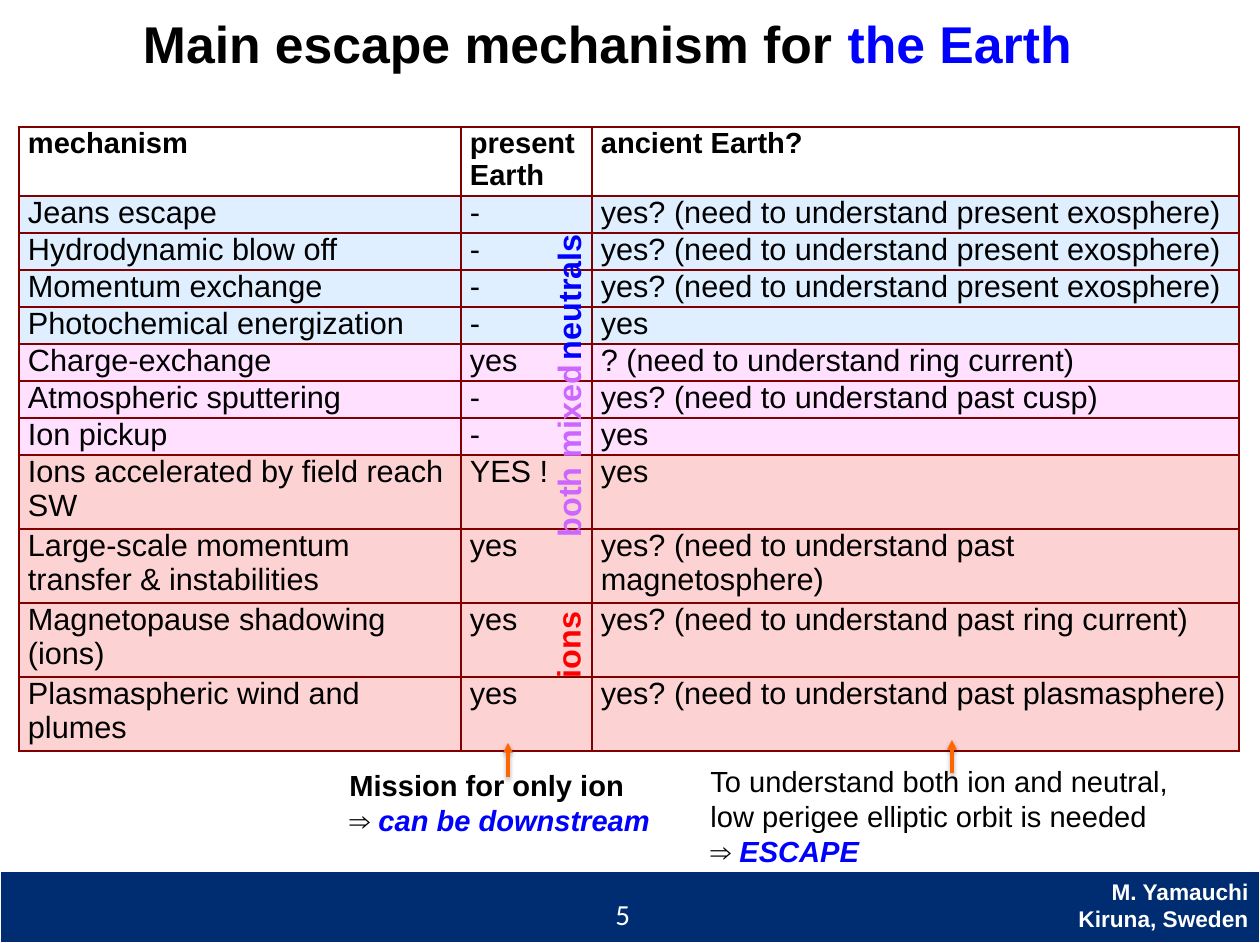
"""Build the slide on escape mechanisms for the Earth."""
from lxml.etree import SubElement as Sub
from pptx import Presentation
from pptx.dml.color import RGBColor as RGB
from pptx.enum.shapes import MSO_CONNECTOR as Conn, MSO_SHAPE as Shape
from pptx.enum.text import PP_ALIGN as Align
from pptx.oxml import parse_xml
from pptx.oxml.ns import nsdecls, qn
from pptx.util import Pt

BLACK, WHITE = RGB(0, 0, 0), RGB(255, 255, 255)
BLUE, RED, PURPLE = RGB(0, 0, 255), RGB(255, 0, 0), RGB(0xCC, 0x66, 0xFF)
NAVY, ORANGE = RGB(0, 0x2D, 0x72), RGB(0xFF, 0x66, 0)
SKY, PINK, ROSE = RGB(0xE0, 0xEF, 0xFF), RGB(0xFF, 0xE0, 0xFF), RGB(0xFD, 0xD2, 0xD3)
MAROON = "800000"

PX = 7862
WIDE, HIGH = 1260, 943
LEFT, TOP = 19, 127
COLS = (442, 131, 647)
HEAD, ROW, TALL = 69, 37, 74

EXO = "yes? (need to understand present exosphere)"
TITLES = ("mechanism", "present Earth", "ancient Earth?")
GROUPS = [
    (SKY, ROW, [
        ("Jeans escape", "-", EXO),
        ("Hydrodynamic blow off", "-", EXO),
        ("Momentum exchange", "-", EXO),
        ("Photochemical energization", "-", "yes"),
    ]),
    (PINK, ROW, [
        ("Charge-exchange", "yes", "? (need to understand ring current)"),
        ("Atmospheric sputtering", "-", "yes? (need to understand past cusp)"),
        ("Ion pickup", "-", "yes"),
    ]),
    (ROSE, TALL, [
        ("Ions accelerated by field reach SW", "YES !", "yes"),
        ("Large-scale momentum transfer & instabilities", "yes",
         "yes? (need to understand past magnetosphere)"),
        ("Magnetopause shadowing (ions)", "yes",
         "yes? (need to understand past ring current)"),
        ("Plasmaspheric wind and plumes", "yes",
         "yes? (need to understand past plasmasphere)"),
    ]),
]

BOLD = {"bold": True}
KEY = {"bold": True, "italic": True, "color": BLUE}
FOOT = {"size": 14, "bold": True, "color": WHITE}
PAGE = {"size": 18, "name": "Calibri", "color": WHITE}
BIG = {"size": 32, "bold": True}
TEXTS = [
    ((72, 6, 1071, 95), Align.CENTER, 0,
     [[("Main escape mechanism for ", BIG), ("the Earth", {**BIG, "color": BLUE})]]),
    ((1052, 872, 208, 66), Align.RIGHT, 0, [[("M. Yamauchi Kiruna, Sweden", FOOT)]]),
    ((604, 891, 58, 47), Align.LEFT, 0, [[("5", PAGE)]]),
    ((338, 762, 340, 83), Align.LEFT, 0,
     [[("Mission for only ion", BOLD)], [("⇒ ", {}), ("can be downstream", KEY)]]),
    ((699, 758, 527, 117), Align.LEFT, 0,
     [[("To understand both ion and neutral, low perigee elliptic orbit is needed", {})],
      [("⇒ ", {}), ("ESCAPE", KEY)]]),
]
LABELS = [
    ("neutrals", BLUE, (451, 271, 236, 52)),
    ("ions", RED, (502, 619, 133, 52)),
    ("both mixed", PURPLE, (443, 425, 252, 52)),
]
ARROWS = [(508, 777, 743), (952, 773, 740)]


def scale(box):
    return [n * PX for n in box]


def style(font, form):
    base = {"size": 18, "name": "Arial", "bold": False, "color": BLACK}
    for key, val in {**base, **form}.items():
        if key == "color":
            font.color.rgb = val
        else:
            setattr(font, key, Pt(val) if key == "size" else val)


def write(para, runs):
    for text, form in runs:
        run = para.add_run()
        run.text = text
        style(run.font, form)


def add_text(slide, box, align, turn, paras):
    item = slide.shapes.add_textbox(*scale(box))
    item.rotation = turn
    frame = item.text_frame
    frame.word_wrap = True
    for i, runs in enumerate(paras):
        para = frame.add_paragraph() if i else frame.paragraphs[0]
        para.alignment = align
        write(para, runs)


def edge(cell):
    props = cell._tc.get_or_add_tcPr()
    for i, side in enumerate("LRTB"):
        props.insert(i, parse_xml(
            f'<a:ln{side} {nsdecls("a")} w="12700"><a:solidFill>'
            f'<a:srgbClr val="{MAROON}"/></a:solidFill></a:ln{side}>'))


def add_grid(slide):
    rows = [(TITLES, None, HEAD, {"size": 18, "bold": True})]
    rows += [(row, fill, high, {"size": 19})
             for fill, high, group in GROUPS for row in group]
    total = sum(row[2] for row in rows)
    box = scale((LEFT, TOP, sum(COLS), total))
    grid = slide.shapes.add_table(len(rows), len(COLS), *box).table
    grid.first_row = grid.horz_banding = False
    for col, wide in zip(grid.columns, COLS):
        col.width = wide * PX
    for r, (texts, fill, high, form) in enumerate(rows):
        grid.rows[r].height = high * PX
        for c, text in enumerate(texts):
            cell = grid.cell(r, c)
            cell.margin_left = cell.margin_right = 9 * PX
            cell.margin_top = cell.margin_bottom = 0
            if fill is None:
                cell.fill.background()
            else:
                cell.fill.solid()
                cell.fill.fore_color.rgb = fill
            write(cell.text_frame.paragraphs[0], [(text, form)])
            edge(cell)


def add_arrow(slide, x, low, top):
    arrow = slide.shapes.add_connector(Conn.STRAIGHT, *scale((x, low, x, top)))
    arrow.line.color.rgb = ORANGE
    arrow.line.width = Pt(2)
    Sub(arrow.line._get_or_add_ln(), qn("a:tailEnd"), type="triangle")
    arrow._element.spPr.append(parse_xml(
        f'<a:effectLst {nsdecls("a")}><a:outerShdw blurRad="39370" dist="20320" '
        'dir="5400000" rotWithShape="0"><a:srgbClr val="000000">'
        '<a:alpha val="38000"/></a:srgbClr></a:outerShdw></a:effectLst>'))


def main():
    deck = Presentation()
    deck.slide_width, deck.slide_height = scale((WIDE, HIGH))
    slide = deck.slides.add_slide(deck.slide_layouts[6])
    bar = slide.shapes.add_shape(Shape.RECTANGLE, *scale((0, 871, WIDE, HIGH - 871)))
    bar.shadow.inherit = False
    bar.fill.solid()
    bar.fill.fore_color.rgb = NAVY
    bar.line.color.rgb = WHITE
    bar.line.width = Pt(0.75)
    add_grid(slide)
    for text, color, box in LABELS:
        form = {"size": 20, "bold": True, "color": color}
        add_text(slide, box, Align.CENTER, 270, [[(text, form)]])
    for item in TEXTS:
        add_text(slide, *item)
    for item in ARROWS:
        add_arrow(slide, *item)
    deck.save("out.pptx")


if __name__ == "__main__":
    main()
